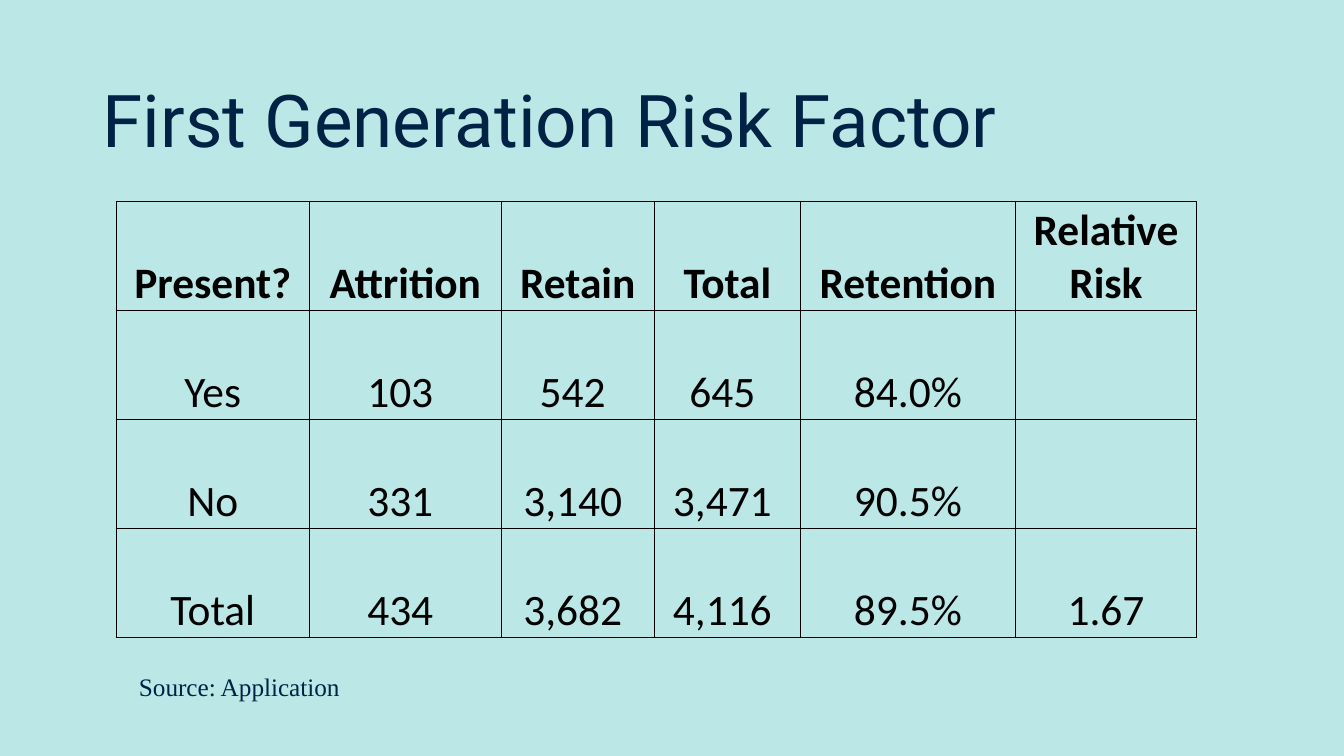
from lxml.etree import SubElement
from pptx import Presentation
from pptx.dml.color import RGBColor as RGB
from pptx.enum.text import MSO_ANCHOR as ANCHOR, PP_ALIGN as ALIGN
from pptx.oxml.ns import qn
from pptx.util import Inches, Pt

COLORS = {"background": "BBE7E6", "navy": "002244", "black": "000000"}
HEADERS = ["Present?", "Attrition", "Retain", "Total", "Retention", "Relative Risk"]
ROWS = [
    ["Yes", "103", "542", "645", "84.0%", ""],
    ["No", "331", "3,140", "3,471", "90.5%", ""],
    ["Total", "434", "3,682", "4,116", "89.5%", "1.67"],
]
COL_WIDTHS = [1.92, 1.9, 1.52, 1.45, 2.13, 1.8]
ROW_HEIGHT = 1.08
COUNT_COLS = (1, 2, 3)


def add_text(box, text, size, font, anchor, spacing=1.0):
    tf = s.shapes.add_textbox(*[Inches(v) for v in box]).text_frame
    tf.word_wrap = True
    tf.vertical_anchor = anchor
    p = tf.paragraphs[0]
    p.text = text
    p.line_spacing = spacing
    p.font.size = Pt(size)
    p.font.name = font
    p.font.color.rgb = RGB.from_string(COLORS["navy"])


def add_borders(cell):
    tc_pr = cell._tc.get_or_add_tcPr()
    for i, side in enumerate(("a:lnL", "a:lnR", "a:lnT", "a:lnB")):
        ln = tc_pr.makeelement(qn(side), {"w": str(Pt(0.5))})
        tc_pr.insert(i, ln)
        fill = SubElement(ln, qn("a:solidFill"))
        SubElement(fill, qn("a:srgbClr"), val=COLORS["black"])


prs = Presentation()
prs.slide_width, prs.slide_height = Inches(13.33), Inches(7.5)
s = prs.slides.add_slide(prs.slide_layouts[6])
s.background.fill.solid()
s.background.fill.fore_color.rgb = RGB.from_string(COLORS["background"])

add_text((0.92, 0.61, 11.5, 1.24), "First Generation Risk Factor", 52, "Roboto",
         ANCHOR.MIDDLE, 0.9)

grid = [HEADERS] + ROWS
table = s.shapes.add_table(
    len(grid), len(HEADERS), Inches(1.15), Inches(2),
    Inches(sum(COL_WIDTHS)), Inches(ROW_HEIGHT * len(grid))).table
table.first_row = table.horz_banding = False
for column, width in zip(table.columns, COL_WIDTHS):
    column.width = Inches(width)

for r, row in enumerate(grid):
    table.rows[r].height = Inches(ROW_HEIGHT)
    for c, text in enumerate(row):
        cell = table.cell(r, c)
        cell.fill.background()
        add_borders(cell)
        cell.vertical_anchor = ANCHOR.BOTTOM
        cell.margin_left = cell.margin_top = Inches(0.03)
        cell.margin_right = Inches(0.13 if r and c in COUNT_COLS else 0.03)
        cell.margin_bottom = 0
        p = cell.text_frame.paragraphs[0]
        p.text = text
        p.alignment = ALIGN.CENTER
        p.font.size = Pt(31)
        p.font.name = "Calibri"
        p.font.bold = r == 0
        p.font.color.rgb = RGB.from_string(COLORS["black"])

add_text((1.28, 6.61, 8.16, 0.4), "Source: Application", 18, "Times New Roman",
         ANCHOR.TOP)

prs.save("out.pptx")
